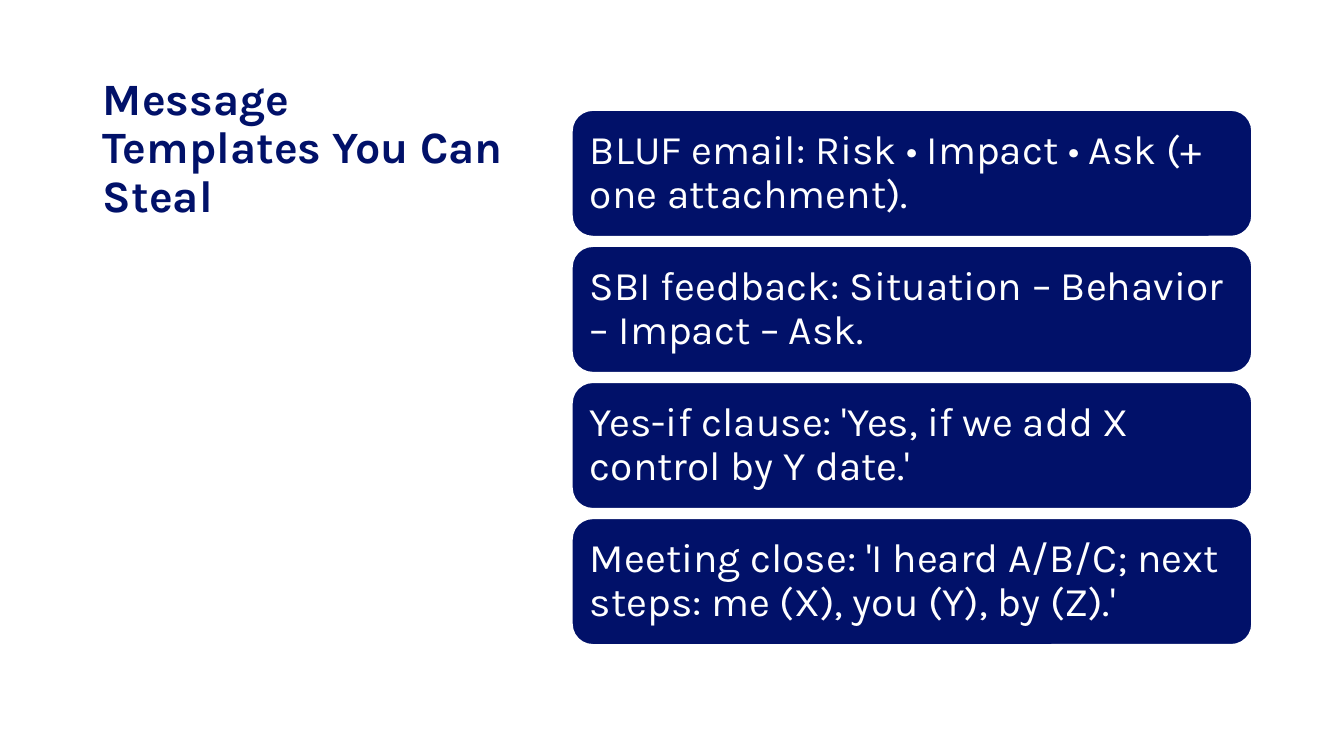
from dataclasses import dataclass

import pptx
import pptx.dml.color
import pptx.enum.shapes
import pptx.enum.text
import pptx.util

Inches = pptx.util.Inches
Pt = pptx.util.Pt


@dataclass(frozen=True)
class Theme:
    navy: str = "011169"
    white: str = "FFFFFF"
    font: str = "Karla"
    title_size: int = 32
    card_size: int = 29


THEME = Theme()
TITLE = "Message Templates You Can Steal"
TEMPLATES = [
    "BLUF email: Risk • Impact • Ask (+ one attachment).",
    "SBI feedback: Situation – Behavior – Impact – Ask.",
    "Yes-if clause: 'Yes, if we add X control by Y date.'",
    "Meeting close: 'I heard A/B/C; next steps: me (X), you (Y), by (Z).'",
]
CARD_TOP = 1.09
CARD_PITCH = 1.35


def rgb(value):
    return pptx.dml.color.RGBColor.from_string(value)


def write_text(box, text, size, color, anchor, bold=False):
    frame = box.text_frame
    frame.word_wrap = True
    frame.auto_size = pptx.enum.text.MSO_AUTO_SIZE.NONE
    frame.vertical_anchor = anchor
    para = frame.paragraphs[0]
    para.alignment = pptx.enum.text.PP_ALIGN.LEFT
    para.line_spacing = 0.9
    para.space_before = Pt(0)
    span = para.add_run()
    span.text = text
    span.font.name = THEME.font
    span.font.size = Pt(size)
    span.font.bold = bold
    span.font.color.rgb = rgb(color)


def place_title(page):
    title = page.shapes.title
    title.left, title.top = Inches(0.92), Inches(0.5)
    title.width, title.height = Inches(4.3), Inches(1.75)
    write_text(title, TITLE, THEME.title_size, THEME.navy,
               pptx.enum.text.MSO_ANCHOR.BOTTOM, bold=True)


def add_card(page, top, text):
    card = page.shapes.add_shape(
        pptx.enum.shapes.MSO_SHAPE.ROUNDED_RECTANGLE,
        Inches(5.67), Inches(top), Inches(6.75), Inches(1.26))
    card.shadow.inherit = False
    card.fill.solid()
    card.fill.fore_color.rgb = rgb(THEME.navy)
    card.line.color.rgb = rgb(THEME.white)
    card.line.width = Pt(1.5)
    frame = card.text_frame
    frame.margin_left = frame.margin_right = Inches(0.12)
    frame.margin_top = frame.margin_bottom = Inches(0.12)
    write_text(card, text, THEME.card_size, THEME.white,
               pptx.enum.text.MSO_ANCHOR.MIDDLE)


def main():
    deck = pptx.Presentation()
    deck.slide_width, deck.slide_height = Inches(13.33), Inches(7.5)
    page = deck.slides.add_slide(deck.slide_layouts.get_by_name("Title Only"))
    page.background.fill.solid()
    page.background.fill.fore_color.rgb = rgb(THEME.white)
    place_title(page)
    for row, text in enumerate(TEMPLATES):
        add_card(page, CARD_TOP + row * CARD_PITCH, text)
    deck.save("out.pptx")


if __name__ == "__main__":
    main()
